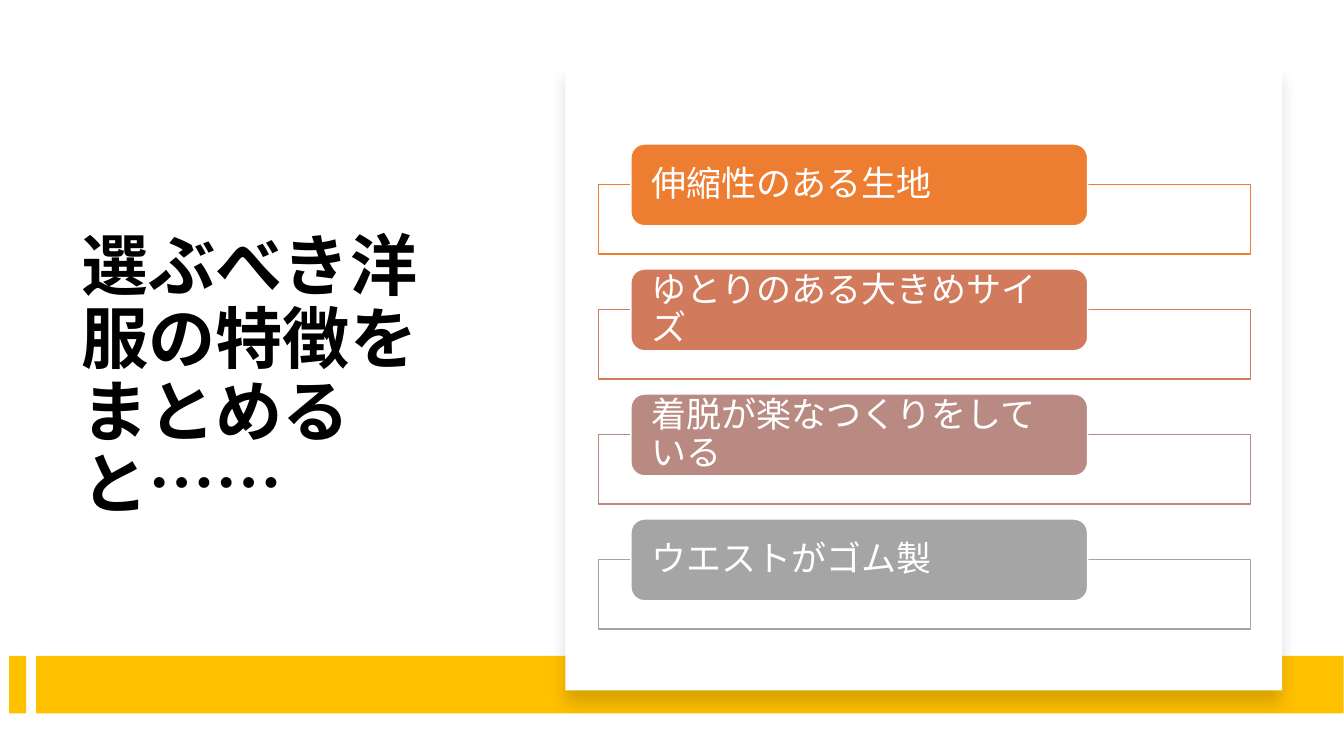
from dataclasses import dataclass

from lxml import etree
from pptx import Presentation
from pptx.dml.color import RGBColor
from pptx.enum.shapes import MSO_SHAPE
from pptx.enum.text import MSO_ANCHOR, MSO_AUTO_SIZE, PP_ALIGN
from pptx.oxml.ns import qn
from pptx.util import Cm, Pt

RECT = MSO_SHAPE.RECTANGLE
ROUND_RECT = MSO_SHAPE.ROUNDED_RECTANGLE
MIDDLE = MSO_ANCHOR.MIDDLE
NO_FIT = MSO_AUTO_SIZE.NONE
LEFT = PP_ALIGN.LEFT
TITLE_ONLY = 5


@dataclass(frozen=True)
class Theme:
    """Hold the colours, font and type sizes of the slide."""
    font: str = "Calibri"
    title_size: float = 48
    label_size: float = 25
    ink: str = "000000"
    paper: str = "FFFFFF"
    band: str = "FFC000"


THEME = Theme()
TITLE = "選ぶべき洋服の特徴をまとめると……"
FEATURES = [
    ("伸縮性のある生地", "ED7D31"),
    ("ゆとりのある大きめサイズ", "D17B5C"),
    ("着脱が楽なつくりをしている", "B98A82"),
    ("ウエストがゴム製", "A5A5A5"),
]
BANDS = [(0.23, 0.43), (0.91, 32.95)]
ROW_PITCH = 3.15


def set_attrs(obj, values):
    """Set every attribute named in a dict of values."""
    for name, value in values.items():
        setattr(obj, name, value)


def add_box(slide, kind, box, fill, line=None):
    """Add a filled shape with an optional one-point outline."""
    sp = slide.shapes.add_shape(kind, *map(Cm, box))
    sp.shadow.inherit = False
    sp.fill.solid()
    sp.fill.fore_color.rgb = RGBColor.from_string(fill)
    if line:
        sp.line.color.rgb = RGBColor.from_string(line)
        sp.line.width = Pt(1)
    else:
        sp.line.fill.background()
    return sp


def add_alpha(colour, percent):
    """Give a colour element an opacity in percent."""
    etree.SubElement(colour, qn("a:alpha"), val=str(percent * 1000))


def add_shadow(sp):
    """Cast a soft shadow straight down from a shape."""
    effects = sp._element.spPr.find(qn("a:effectLst"))
    shadow = etree.SubElement(effects, qn("a:outerShdw"), blurRad=str(Pt(11)),
                              dist=str(Pt(10)), dir="5400000", rotWithShape="0")
    add_alpha(etree.SubElement(shadow, qn("a:srgbClr"), val=THEME.ink), 15)


def write_text(sp, text, size, colour, inset, bold=False):
    """Write one left-aligned, vertically centred paragraph."""
    tf = sp.text_frame
    set_attrs(tf, {"word_wrap": True, "auto_size": NO_FIT,
                   "vertical_anchor": MIDDLE,
                   "margin_left": Cm(inset), "margin_right": Cm(inset),
                   "margin_top": 0, "margin_bottom": 0})
    p = tf.paragraphs[0]
    set_attrs(p, {"alignment": LEFT, "line_spacing": 0.9, "space_before": Pt(0)})
    r = p.add_run()
    r.text = text
    set_attrs(r.font, {"name": THEME.font, "size": Pt(size), "bold": bold})
    r.font.color.rgb = RGBColor.from_string(colour)


def add_title(slide):
    """Place and format the title placeholder."""
    sp = slide.shapes.title
    set_attrs(sp, {"left": Cm(1.8), "top": Cm(3.05),
                   "width": Cm(10.54), "height": Cm(12.95)})
    write_text(sp, TITLE, THEME.title_size, THEME.ink, 0.25, bold=True)


def add_feature(slide, row, text, colour):
    """Add an outlined frame with its coloured label on top."""
    offset = row * ROW_PITCH
    frame = add_box(slide, RECT, (15.09, 4.65 + offset, 16.43, 1.75),
                    THEME.paper, colour)
    fill = frame._element.spPr.find(qn("a:solidFill"))
    add_alpha(fill[0], 90)
    label = add_box(slide, ROUND_RECT, (15.9, 3.63 + offset, 11.51, 2.06),
                    colour, THEME.paper)
    write_text(label, text, THEME.label_size, THEME.paper, 0.43)


def main():
    """Build the slide and save it."""
    prs = Presentation()
    set_attrs(prs, {"slide_width": Cm(33.87), "slide_height": Cm(19.05)})
    slide = prs.slides.add_slide(prs.slide_layouts[TITLE_ONLY])
    add_title(slide)
    for left, width in BANDS:
        add_box(slide, RECT, (left, 16.53, width, 1.45), THEME.band)
    card = add_box(slide, RECT, (14.25, 1.63, 18.06, 15.77), THEME.paper)
    add_shadow(card)
    for row, (text, colour) in enumerate(FEATURES):
        add_feature(slide, row, text, colour)
    prs.save("out.pptx")


if __name__ == "__main__":
    main()
